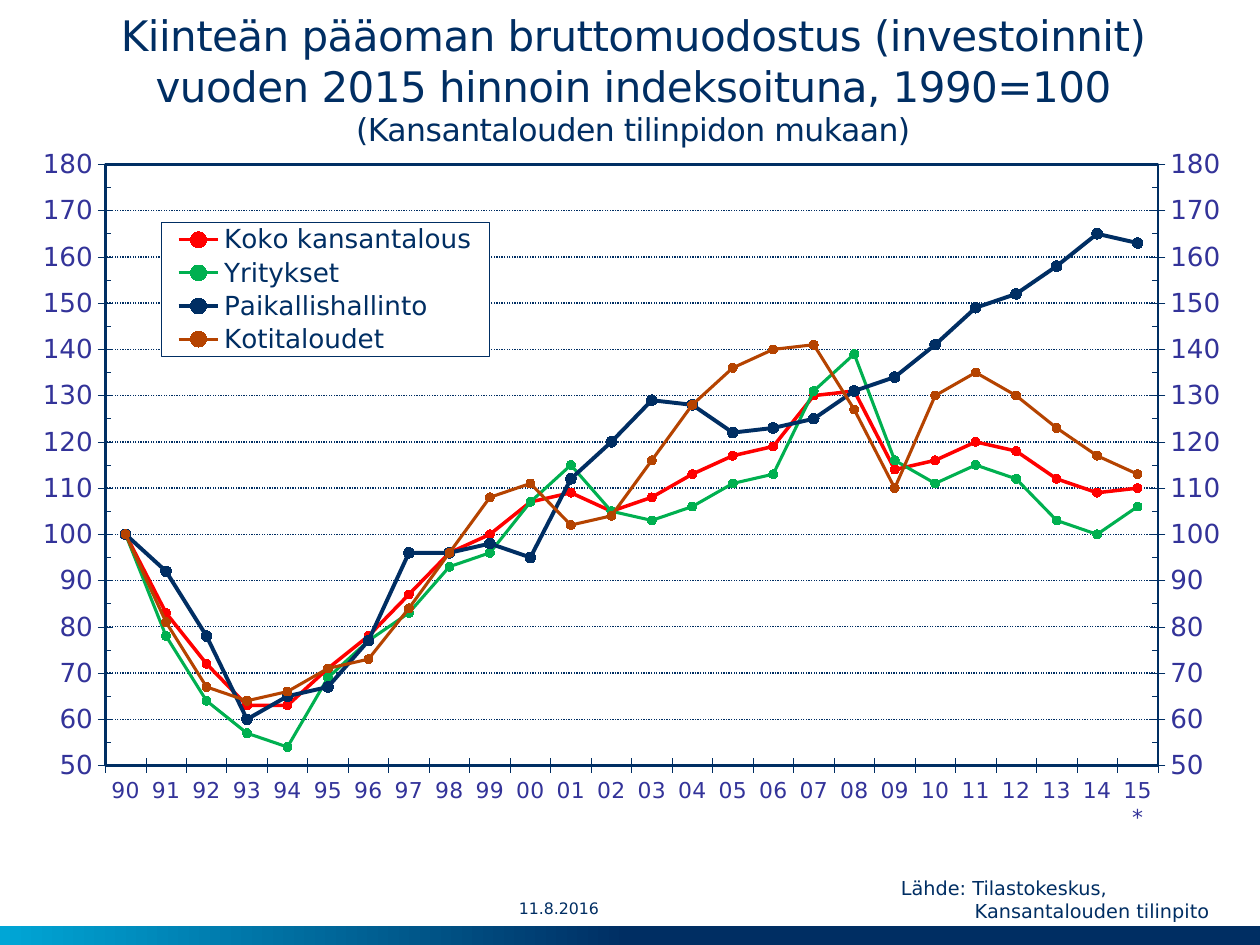
from copy import deepcopy

from pptx import Presentation
from pptx.chart.data import CategoryChartData
from pptx.dml.color import RGBColor
from pptx.enum.chart import XL_CHART_TYPE, XL_LEGEND_POSITION, XL_MARKER_STYLE, XL_TICK_MARK
from pptx.enum.dml import MSO_LINE
from pptx.enum.shapes import MSO_SHAPE
from pptx.enum.text import MSO_ANCHOR, MSO_AUTO_SIZE, PP_ALIGN
from pptx.oxml import parse_xml
from pptx.oxml.ns import nsdecls, qn
from pptx.util import Cm, Pt

LINE_MARKERS = XL_CHART_TYPE.LINE_MARKERS
LEGEND_RIGHT = XL_LEGEND_POSITION.RIGHT
CIRCLE = XL_MARKER_STYLE.CIRCLE
TICK_CROSS = XL_TICK_MARK.CROSS
TICK_INSIDE = XL_TICK_MARK.INSIDE
DOTTED = MSO_LINE.ROUND_DOT
RECTANGLE = MSO_SHAPE.RECTANGLE
ANCHOR_TOP = MSO_ANCHOR.TOP
ANCHOR_MIDDLE = MSO_ANCHOR.MIDDLE
ANCHOR_BOTTOM = MSO_ANCHOR.BOTTOM
NO_AUTOFIT = MSO_AUTO_SIZE.NONE
CENTER = PP_ALIGN.CENTER

FONT = "DejaVu Sans"
NAVY = "002E63"
SKY = "00A6D6"
VIOLET = "333399"
WHITE = "FFFFFF"

YEARS = [f"{year % 100:02d}" for year in range(1990, 2015)] + ["15*"]
SERIES = [
    ("Koko kansantalous", "FF0000", 2, 5,
     [100, 83, 72, 63, 63, 71, 78, 87, 96, 100, 107, 109, 105, 108, 113, 117,
      119, 130, 131, 114, 116, 120, 118, 112, 109, 110]),
    ("Yritykset", "00B050", 1.75, 5,
     [100, 78, 64, 57, 54, 69, 77, 83, 93, 96, 107, 115, 105, 103, 106, 111,
      113, 131, 139, 116, 111, 115, 112, 103, 100, 106]),
    ("Paikallishallinto", NAVY, 2.25, 6,
     [100, 92, 78, 60, 65, 67, 77, 96, 96, 98, 95, 112, 120, 129, 128, 122,
      123, 125, 131, 134, 141, 149, 152, 158, 165, 163]),
    ("Kotitaloudet", "B54300", 1.75, 5,
     [100, 81, 67, 64, 66, 71, 73, 84, 96, 108, 111, 102, 104, 116, 128, 136,
      140, 141, 127, 110, 130, 135, 130, 123, 117, 113]),
]


def color(value):
    return RGBColor.from_string(value)


def format_font(font, size, value):
    font.name = FONT
    font.size = Pt(size)
    font.bold = False
    font.color.rgb = color(value)


def add_run(paragraph, text, size):
    run = paragraph.add_run()
    run.text = text
    format_font(run.font, size, NAVY)
    return run


def add_bottom_bar(slide):
    bar = slide.shapes.add_shape(RECTANGLE, Cm(0), Cm(18.67), Cm(25.4), Cm(0.38))
    bar.shadow.inherit = False
    bar.line.fill.background()
    bar.fill.gradient()
    bar.fill.gradient_angle = 180
    for stop, position, value in zip(bar.fill.gradient_stops, (0.5, 1), (NAVY, SKY)):
        stop.position = position
        stop.color.rgb = color(value)


def format_title(slide):
    title = slide.shapes.title
    title.left, title.top, title.width, title.height = Cm(0.51), Cm(0), Cm(24.51), Cm(3.12)
    frame = title.text_frame
    frame.auto_size = NO_AUTOFIT
    frame.vertical_anchor = ANCHOR_BOTTOM
    frame.margin_left = frame.margin_right = Cm(0)
    frame.margin_top = frame.margin_bottom = Cm(0.13)
    paragraph = frame.paragraphs[0]
    paragraph.alignment = CENTER
    paragraph.line_spacing = 1.0
    lines = [
        ("Kiinteän pääoman bruttomuodostus (investoinnit)", 24),
        ("vuoden 2015 hinnoin indeksoituna, 1990=100", 24),
        ("(Kansantalouden tilinpidon mukaan)", 18),
    ]
    for index, (text, size) in enumerate(lines):
        if index:
            paragraph.add_line_break()
        run = add_run(paragraph, text, size)
        run.font._element.set("spc", "-30")


def add_text(slide, box, lines, size, margins, anchor):
    shape = slide.shapes.add_textbox(*(Cm(length) for length in box))
    frame = shape.text_frame
    frame.word_wrap = True
    frame.vertical_anchor = anchor
    frame.margin_left = frame.margin_right = Cm(margins[0])
    frame.margin_top = frame.margin_bottom = Cm(margins[1])
    for index, (text, indent) in enumerate(lines):
        paragraph = frame.add_paragraph() if index else frame.paragraphs[0]
        if indent:
            paragraph._p.get_or_add_pPr().set("marL", str(Cm(indent)))
        add_run(paragraph, text, size)


def manual_layout(x, y, width, height, inner=False):
    target = '<c:layoutTarget val="inner"/>' if inner else ""
    return parse_xml(
        f'<c:layout {nsdecls("c")}><c:manualLayout>{target}'
        '<c:xMode val="edge"/><c:yMode val="edge"/>'
        f'<c:x val="{x}"/><c:y val="{y}"/><c:w val="{width}"/><c:h val="{height}"/>'
        "</c:manualLayout></c:layout>")


def outline(width, fill):
    return parse_xml(
        f'<c:spPr {nsdecls("c", "a")}>{fill}<a:ln w="{Pt(width)}"><a:solidFill>'
        f'<a:srgbClr val="{NAVY}"/></a:solidFill></a:ln></c:spPr>')


def remove_children(parent, tag):
    for child in parent.findall(qn(tag)):
        parent.remove(child)


def format_axis(axis, size):
    axis.major_tick_mark = TICK_CROSS
    axis.format.line.color.rgb = color(NAVY)
    axis.format.line.width = Pt(0.31)
    format_font(axis.tick_labels.font, size, VIOLET)


def format_value_axis(axis):
    format_axis(axis, 15)
    axis.minimum_scale, axis.maximum_scale = 50, 180
    axis.major_unit, axis.minor_unit = 10, 5
    axis.minor_tick_mark = TICK_INSIDE
    axis.tick_labels.number_format = "0"
    axis.tick_labels.number_format_is_linked = False
    axis.has_major_gridlines = True
    grid = axis.major_gridlines.format.line
    grid.color.rgb = color(NAVY)
    grid.width = Pt(0.75)
    grid.dash_style = DOTTED
    element = axis._element
    remove_children(element, "c:crossBetween")
    element.find(qn("c:crosses")).addnext(
        parse_xml(f'<c:crossBetween {nsdecls("c")} val="between"/>'))


def format_legend(chart):
    chart.has_legend = True
    legend = chart.legend
    legend.position = LEGEND_RIGHT
    legend.include_in_layout = False
    format_font(legend.font, 15, NAVY)
    element = legend._element
    remove_children(element, "c:layout")
    overlay = element.find(qn("c:overlay"))
    overlay.addprevious(manual_layout(0.106, 0.129, 0.276, 0.193))
    white = f'<a:solidFill><a:srgbClr val="{WHITE}"/></a:solidFill>'
    overlay.addnext(outline(0.5, white))


def add_right_axis(chart):
    left_plot = chart.plots[0]._element
    right_plot = deepcopy(left_plot)
    left_series = left_plot.findall(qn("c:ser"))
    right_series = right_plot.findall(qn("c:ser"))
    for series in left_series[1:]:
        left_plot.remove(series)
    right_plot.remove(right_series[0])
    left_plot.addnext(right_plot)
    category, value = chart.category_axis._element, chart.value_axis._element
    right_category, right_value = deepcopy(category), deepcopy(value)
    value.addnext(right_value)
    right_value.addnext(right_category)
    identifiers = {
        category.find(qn("c:axId")).get("val"): "50010",
        value.find(qn("c:axId")).get("val"): "50020",
    }
    for parent in (right_plot, right_category, right_value):
        for tag in ("c:axId", "c:crossAx"):
            for element in parent.findall(qn(tag)):
                element.set("val", identifiers[element.get("val")])
    right_category.find(qn("c:delete")).set("val", "1")
    remove_children(right_value, "c:majorGridlines")
    right_value.find(qn("c:axPos")).set("val", "r")
    right_value.find(qn("c:crosses")).set("val", "max")


def add_investment_chart(slide):
    data = CategoryChartData(number_format="0")
    data.categories = YEARS
    for name, _, _, _, values in SERIES:
        data.add_series(name, values)
    chart = slide.shapes.add_chart(
        LINE_MARKERS, Cm(0.71), Cm(2.67), Cm(23.95), Cm(14.07), data).chart
    chart.has_title = False
    format_font(chart.font, 15, NAVY)
    chart.plots[0].vary_by_categories = False
    for series, (_, value, width, marker_size, _) in zip(chart.plots[0].series, SERIES):
        series.smooth = False
        series.format.line.color.rgb = color(value)
        series.format.line.width = Pt(width)
        series.marker.style = CIRCLE
        series.marker.size = marker_size
        series.marker.format.fill.solid()
        series.marker.format.fill.fore_color.rgb = color(value)
        series.marker.format.line.color.rgb = color(value)
    format_axis(chart.category_axis, 12.5)
    format_value_axis(chart.value_axis)
    chart.category_axis.visible = chart.value_axis.visible = True
    format_legend(chart)
    add_right_axis(chart)
    plot_area = chart._chartSpace.chart.plotArea
    remove_children(plot_area, "c:layout")
    plot_area.insert(0, manual_layout(0.059, 0.046, 0.886, 0.863, inner=True))
    plot_area.append(outline(1.5, "<a:noFill/>"))


def main():
    presentation = Presentation()
    presentation.slide_width, presentation.slide_height = Cm(25.4), Cm(19.05)
    slide = presentation.slides.add_slide(presentation.slide_layouts[5])
    add_bottom_bar(slide)
    format_title(slide)
    add_investment_chart(slide)
    source = [("Lähde: Tilastokeskus,", 0), ("Kansantalouden tilinpito", 1.49)]
    add_text(slide, (17.91, 17.53, 7.39, 1.19), source, 11, (0.25, 0.13), ANCHOR_TOP)
    add_text(slide, (10.46, 17.93, 8.61, 0.74), [("11.8.2016", 0)], 9, (0, 0), ANCHOR_MIDDLE)
    presentation.save("out.pptx")


if __name__ == "__main__":
    main()
